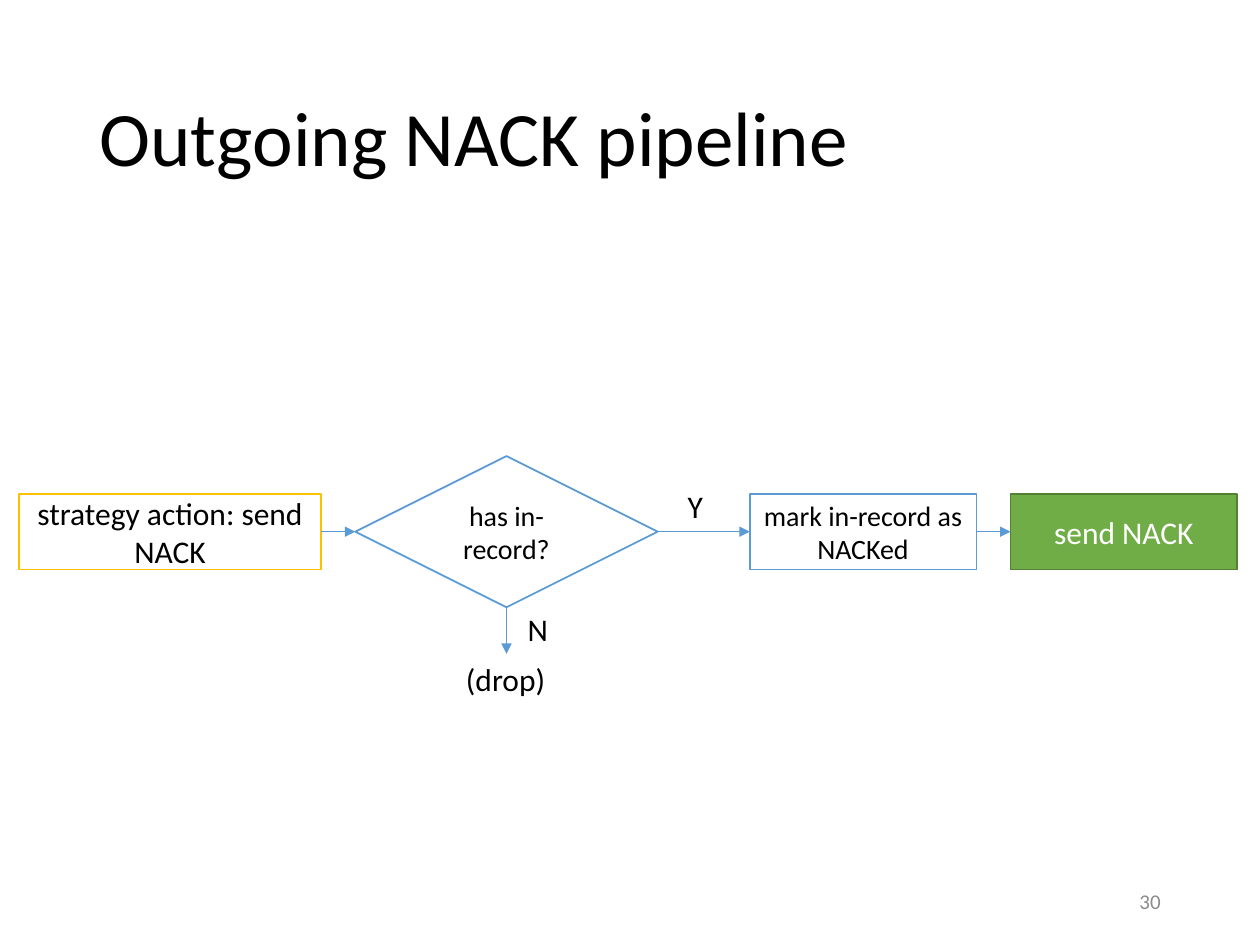
from pptx import Presentation
from pptx import util as u
from pptx.dml.color import RGBColor
from pptx.enum import shapes, text
from pptx.oxml.ns import qn
from lxml import etree

HUES = {
    "black": "000000", "white": "FFFFFF", "gray": "8C8C8C", "blue": "5B9BD5",
    "gold": "FFC000", "green": "70AD47", "moss": "538035",
}
RECT = shapes.MSO_SHAPE.RECTANGLE
FORK = shapes.MSO_SHAPE.FLOWCHART_DECISION
TOP, LEFT, BOTTOM, RIGHT = range(4)
MID = 4.22


class Board:
    font = "Calibri"

    def __init__(self, slide):
        self.slide = slide

    def hue(self, name):
        return RGBColor.from_string(HUES[name])

    def letter(self, shape, words, size, hue="black", align=None, anchor=None, wrap=True):
        frame = shape.text_frame
        frame.text = words
        frame.word_wrap = wrap
        if anchor is not None:
            frame.vertical_anchor = anchor
        para = frame.paragraphs[0]
        para.alignment = align
        font = para.runs[0].font
        font.name, font.size = self.font, u.Pt(size)
        font.color.rgb = self.hue(hue)
        return para

    def title(self, words, *area):
        shape = self.slide.shapes.title
        shape.left, shape.top, shape.width, shape.height = map(u.Inches, area)
        para = self.letter(shape, words, 44, align=text.PP_ALIGN.LEFT,
                           anchor=text.MSO_ANCHOR.MIDDLE)
        para.line_spacing = 0.9

    def node(self, kind, words, left, width, height, size, line, fill="white", ink="black"):
        area = map(u.Inches, (left, MID - height / 2, width, height))
        shape = self.slide.shapes.add_shape(kind, *area)
        shape.shadow.inherit = False
        shape.fill.solid()
        shape.fill.fore_color.rgb = self.hue(fill)
        shape.line.color.rgb = self.hue(line)
        shape.line.width = u.Pt(1)
        self.letter(shape, words, size, ink, text.PP_ALIGN.CENTER, text.MSO_ANCHOR.MIDDLE)
        return shape

    def label(self, words, left, top, width, size=18, **style):
        shape = self.slide.shapes.add_textbox(*map(u.Inches, (left, top, width, 0.4)))
        self.letter(shape, words, size, **style)
        return shape

    def arrow(self, start, end, out=RIGHT, into=LEFT):
        link = self.slide.shapes.add_connector(shapes.MSO_CONNECTOR.STRAIGHT, 0, 0, 0, 0)
        link.begin_connect(start, out)
        link.end_connect(end, into)
        link.line.color.rgb = self.hue("blue")
        link.line.width = u.Pt(0.5)
        props = link._element.spPr
        etree.SubElement(props.find(qn("a:ln")), qn("a:tailEnd"), type="triangle")
        etree.SubElement(props, qn("a:effectLst"))


def main():
    deck = Presentation()
    deck.slide_width, deck.slide_height = u.Inches(10), u.Inches(7.5)
    board = Board(deck.slides.add_slide(deck.slide_layouts[5]))
    board.title("Outgoing NACK pipeline", 0.69, 0.4, 8.62, 1.45)

    act = board.node(RECT, "strategy action: send NACK", 0.15, 2.4, 0.6, 18, "gold")
    test = board.node(FORK, "has in-record?", 2.82, 2.4, 1.2, 16, "blue")
    mark = board.node(RECT, "mark in-record as NACKed", 5.95, 1.8, 0.6, 16, "blue")
    send = board.node(RECT, "send NACK", 8.02, 1.8, 0.6, 18, "moss", "green", "white")
    drop = board.label("(drop)", 3.6, 5.19, 0.84, wrap=False)

    steps = [act, test, mark, send]
    for start, end in zip(steps, steps[1:]):
        board.arrow(start, end)
    board.arrow(test, drop, BOTTOM, TOP)

    board.label("N", 4.09, 4.79, 0.36, wrap=False)
    board.label("Y", 5.36, 3.82, 0.32, wrap=False)
    board.label("30", 7.06, 6.95, 2.25, 12, hue="gray",
                align=text.PP_ALIGN.RIGHT, anchor=text.MSO_ANCHOR.MIDDLE)
    deck.save("out.pptx")


if __name__ == "__main__":
    main()
